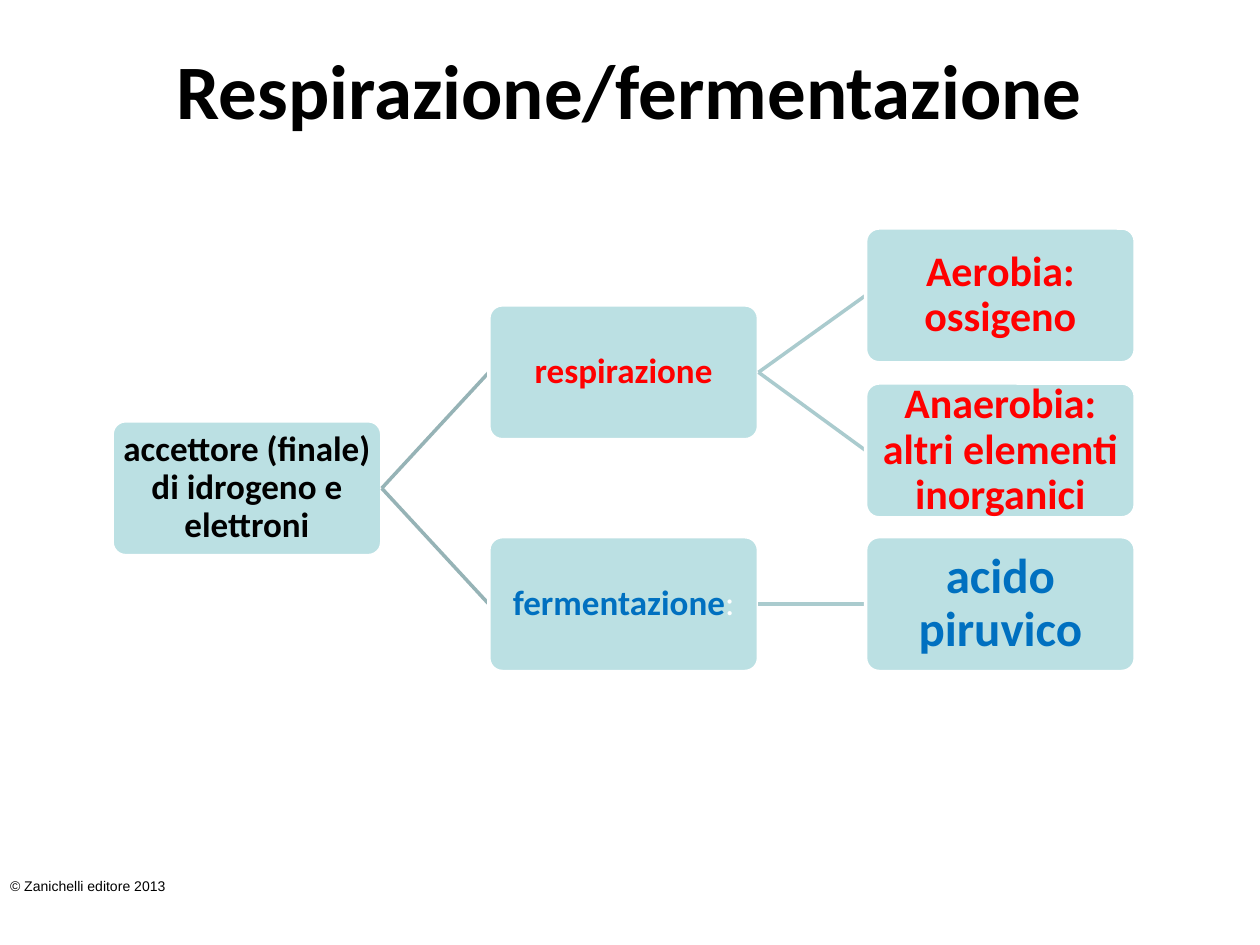
import pptx
import pptx.util
import pptx.dml.color
import pptx.enum.shapes
import pptx.enum.text
import lxml.etree

Inches = pptx.util.Inches
Pt = pptx.util.Pt
Align = pptx.enum.text.PP_ALIGN
Anchor = pptx.enum.text.MSO_ANCHOR
Kind = pptx.enum.shapes.MSO_SHAPE

COLORS = {
    "black": "000000",
    "white": "FFFFFF",
    "red": "FF0000",
    "blue": "0070C0",
    "box": "BBE0E3",
    "dark": "96B3B6",
    "light": "AACBCE",
}


def rgb(name):
    return pptx.dml.color.RGBColor.from_string(COLORS[name])


def write(shape, text, size, color, font="Calibri", bold=True,
          align=Align.CENTER, anchor=Anchor.MIDDLE, pad=(0, 0)):
    """Fill the shape with one paragraph; pad is (sides, top and bottom)."""
    frame = shape.text_frame
    frame.word_wrap = True
    frame.vertical_anchor = anchor
    frame.margin_left = frame.margin_right = Inches(pad[0])
    frame.margin_top = frame.margin_bottom = Inches(pad[1])
    para = frame.paragraphs[0]
    para.alignment = align
    para.add_run().text = text
    para.font.name = font
    para.font.size = Pt(size)
    para.font.bold = bold
    para.font.color.rgb = rgb(color)
    return para


deck = pptx.Presentation()
deck.slide_width, deck.slide_height = Inches(10), Inches(7.5)
slide = deck.slides.add_slide(deck.slide_layouts[6])
shapes = slide.shapes

foot = shapes.add_textbox(Inches(0.08), Inches(6.92), Inches(2.13), Inches(0.22))
write(foot, "© Zanichelli editore 2013", 8, "black", font="Arial",
      bold=False, align=Align.LEFT)

title = shapes.add_textbox(Inches(0.5), Inches(0.3), Inches(9), Inches(0.77))
write(title, "Respirazione/fermentazione", 44, "black",
      anchor=Anchor.TOP, pad=(0.07, 0.04))

# Tree: name, parent, level, top, text, size, colour
WIDTH, HEIGHT = 2.14, 1.07
LEFT, STEP = 0.89, 2.99
NODES = [
    ("root", None, 0, 3.34, "accettore (finale) di idrogeno e elettroni", 20, "black"),
    ("resp", "root", 1, 2.42, "respirazione", 20, "red"),
    ("aero", "resp", 2, 1.81, "Aerobia: ossigeno", 24, "red"),
    ("anaer", "resp", 2, 3.04, "Anaerobia: altri elementi inorganici", 24, "red"),
    ("ferm", "root", 1, 4.26, "fermentazione", 20, "blue"),
    ("acid", "ferm", 2, 4.26, "acido piruvico", 28, "blue"),
]
boxes = {}
for name, parent, level, top, text, size, color in NODES:
    box = shapes.add_shape(Kind.ROUNDED_RECTANGLE, Inches(LEFT + level * STEP),
                           Inches(top), Inches(WIDTH), Inches(HEIGHT))
    box.adjustments[0] = 0.1
    box.shadow.inherit = False
    box.fill.solid()
    box.fill.fore_color.rgb = rgb("box")
    box.line.color.rgb = rgb("white")
    box.line.width = Pt(2)
    pad = 0.02 if level == 2 else 0.01
    para = write(box, text, size, color, pad=(pad, pad))
    para.line_spacing = 0.9
    if name == "ferm":
        colon = para.add_run()
        colon.text = ":"
        colon.font.bold = False
        colon.font.color.rgb = rgb("white")
    boxes[name] = box

    if parent:
        link = shapes.add_connector(pptx.enum.shapes.MSO_CONNECTOR.STRAIGHT, 0, 0, 0, 0)
        link.begin_connect(boxes[parent], 3)
        link.end_connect(box, 1)
        link.line.color.rgb = rgb("dark" if level == 1 else "light")
        link.line.width = Pt(2)
        lxml.etree.SubElement(link._element.spPr, pptx.oxml.ns.qn("a:effectLst"))
        # The child's white border covers the end of its link
        link._element.addnext(box._element)

deck.save("out.pptx")
